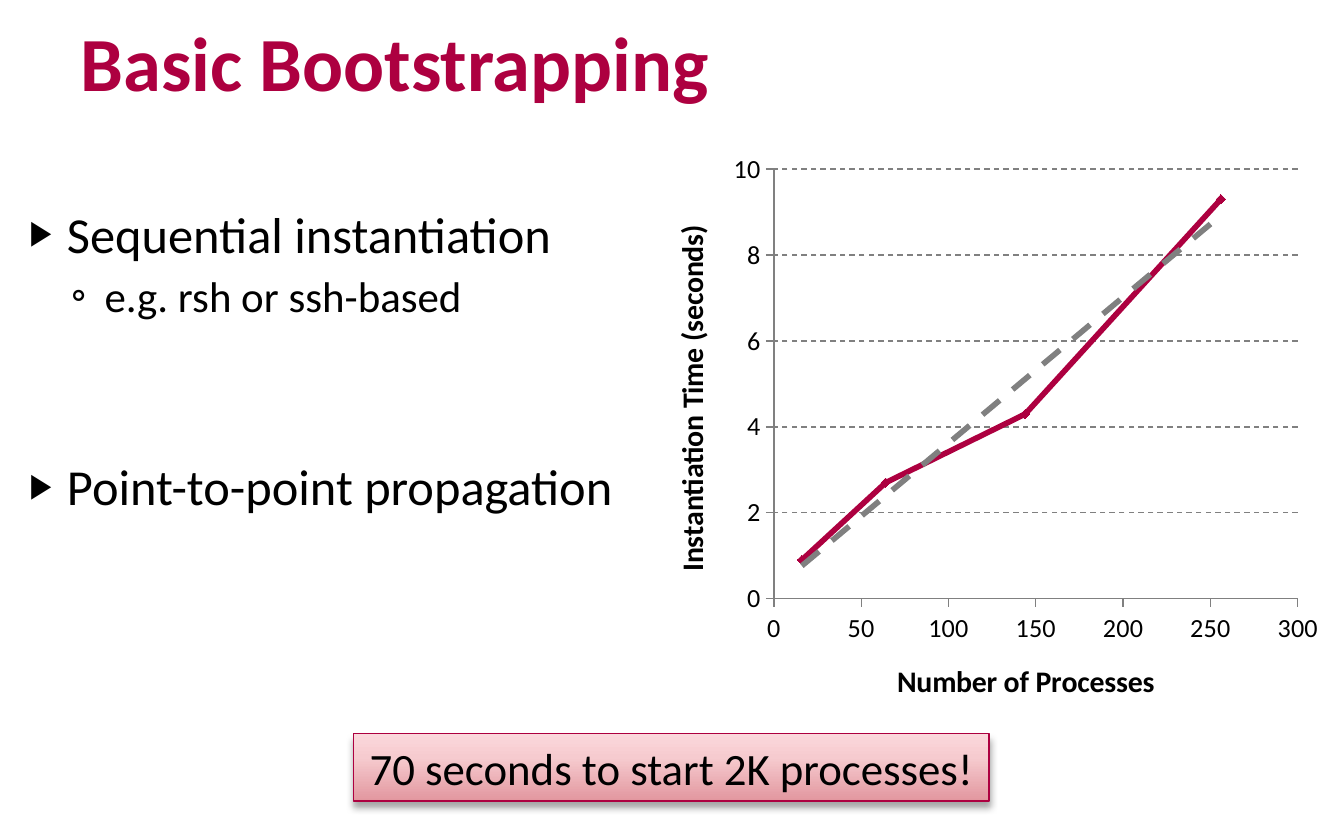
from pptx import Presentation
from pptx.chart.data import XyChartData
from pptx.dml.color import RGBColor
from pptx.enum.chart import XL_CHART_TYPE, XL_MARKER_STYLE, XL_TICK_MARK
from pptx.enum.dml import MSO_LINE
from pptx.enum.shapes import MSO_SHAPE
from pptx.enum.text import MSO_ANCHOR, MSO_AUTO_SIZE, PP_ALIGN
from pptx.oxml import parse_xml
from pptx.oxml.ns import nsdecls
from pptx.util import Inches, Pt

WIDTH, HEIGHT = Inches(10), Inches(6.25)
FONT, BLACK, CRIMSON, GRAY = "Calibri", "000000", "AD0040", "808080"

# Boxes as shares of the slide: left, top, width, height
TITLE_BOX = (0.05, 0.0064, 0.9, 0.1328)
BULLET_BOX = (0, 0.2336, 0.475, 0.6592)
CHART_BOX = (0.492, 0.1664, 0.496, 0.6864)
CALLOUT_BOX = (0.263, 0.8736, 0.473, 0.08)

# Bullet levels: sign, sign size in percent, left margin and hanging indent in inches, text size
LEVELS = [("▶", 68, 0.4, 0.28, 27), ("◦", 100, 0.68, 0.25, 23)]
# Level, space before in points, text
BULLETS = [
    (0, 4, "Sequential instantiation"),
    (1, 3.2, "e.g. rsh or ssh-based"),
    (0, 72, "Point-to-point propagation"),
]
POINTS = [(16, 0.9), (64, 2.7), (144, 4.3), (256, 9.3)]
GRADIENT = [(0, "E2979F"), (65, "F6CBCF"), (100, "FBD8DC")]


def color(value):
    return RGBColor.from_string(value)


def place(box):
    """Turn shares of the slide into lengths."""
    left, top, width, height = box
    return int(left * WIDTH), int(top * HEIGHT), int(width * WIDTH), int(height * HEIGHT)


def style_font(font, size, value=BLACK, bold=False):
    font.name, font.size, font.bold = FONT, Pt(size), bold
    font.color.rgb = color(value)


def style_line(line, value, width, dash=None):
    line.color.rgb = color(value)
    line.width = Pt(width)
    if dash is not None:
        line.dash_style = dash


def add_run(para, text, size, value=BLACK, bold=False):
    span = para.add_run()
    span.text = text
    style_font(span.font, size, value, bold)


def add_title(page, box):
    title = page.shapes.title
    title.left, title.top, title.width, title.height = place(box)
    frame = title.text_frame
    frame.vertical_anchor = MSO_ANCHOR.MIDDLE
    para = frame.paragraphs[0]
    para.alignment = PP_ALIGN.LEFT
    add_run(para, "Basic Bootstrapping", 41, CRIMSON, True)


def add_bullets(page, box):
    frame = page.shapes.add_textbox(*place(box)).text_frame
    frame.word_wrap = True
    for index, (level, space, text) in enumerate(BULLETS):
        para = frame.paragraphs[0] if index == 0 else frame.add_paragraph()
        para.level = level
        para.space_before = Pt(space)
        sign, sign_size, margin, hanging, size = LEVELS[level]
        properties = para._p.get_or_add_pPr()
        properties.set("marL", str(Inches(margin)))
        properties.set("indent", str(-Inches(hanging)))
        for xml in (f'<a:buSzPct {nsdecls("a")} val="{sign_size * 1000}"/>',
                    f'<a:buFont {nsdecls("a")} typeface="{FONT}"/>',
                    f'<a:buChar {nsdecls("a")} char="{sign}"/>'):
            properties.append(parse_xml(xml))
        add_run(para, text, size)


def style_axis(axis, title, maximum, step):
    axis.minimum_scale, axis.maximum_scale, axis.major_unit = 0, maximum, step
    axis.major_tick_mark, axis.minor_tick_mark = XL_TICK_MARK.OUTSIDE, XL_TICK_MARK.NONE
    style_font(axis.tick_labels.font, 14)
    axis.tick_labels.number_format = "General"
    axis.tick_labels.number_format_is_linked = False
    style_line(axis.format.line, GRAY, 0.75)
    add_run(axis.axis_title.text_frame.paragraphs[0], title, 16, bold=True)


def add_trend(series):
    series._element.find("{*}xVal").addprevious(parse_xml(
        f'<c:trendline {nsdecls("c", "a")}><c:spPr><a:ln w="{Pt(3)}"><a:solidFill>'
        f'<a:srgbClr val="{GRAY}"/></a:solidFill><a:prstDash val="dash"/></a:ln></c:spPr>'
        '<c:trendlineType val="linear"/><c:dispRSqr val="0"/><c:dispEq val="0"/></c:trendline>'))


def set_plot_area(chart, left, top, width, height):
    """Fix the inner plot area, in shares of the chart."""
    area = chart._chartSpace.chart.plotArea
    for old in area.findall("{*}layout"):
        area.remove(old)
    area.insert(0, parse_xml(
        f'<c:layout {nsdecls("c")}><c:manualLayout><c:layoutTarget val="inner"/>'
        '<c:xMode val="edge"/><c:yMode val="edge"/>'
        f'<c:x val="{left}"/><c:y val="{top}"/><c:w val="{width}"/><c:h val="{height}"/>'
        '</c:manualLayout></c:layout>'))


def add_timing_chart(page, box):
    data = XyChartData()
    points = data.add_series("Series 1")
    for processes, seconds in POINTS:
        points.add_data_point(processes, seconds)
    chart = page.shapes.add_chart(XL_CHART_TYPE.XY_SCATTER_LINES, *place(box), data).chart
    chart.has_title = chart.has_legend = False
    style_font(chart.font, 10)
    chart.plots[0].vary_by_categories = False
    style_axis(chart.category_axis, "Number of Processes", 300, 50)
    style_axis(chart.value_axis, "Instantiation Time (seconds)", 10, 2)
    chart.category_axis.has_major_gridlines = False
    style_line(chart.value_axis.major_gridlines.format.line, GRAY, 0.75, MSO_LINE.DASH)
    series = chart.plots[0].series[0]
    series.smooth = False
    style_line(series.format.line, CRIMSON, 3)
    marker = series.marker
    marker.style, marker.size = XL_MARKER_STYLE.DIAMOND, 5
    marker.format.fill.solid()
    marker.format.fill.fore_color.rgb = color(CRIMSON)
    style_line(marker.format.line, CRIMSON, 0.75)
    add_trend(series)
    set_plot_area(chart, 0.169, 0.051, 0.786, 0.745)


def add_callout(page, box):
    callout = page.shapes.add_shape(MSO_SHAPE.RECTANGLE, *place(box))
    style_line(callout.line, CRIMSON, 0.75)
    stops = "".join(f'<a:gs pos="{share * 1000}"><a:srgbClr val="{value}"/></a:gs>'
                    for share, value in GRADIENT)
    properties = callout._element.spPr
    properties.find("{*}ln").addprevious(parse_xml(
        f'<a:gradFill {nsdecls("a")} rotWithShape="1"><a:gsLst>{stops}</a:gsLst>'
        '<a:lin ang="16200000" scaled="0"/></a:gradFill>'))
    properties.append(parse_xml(
        f'<a:effectLst {nsdecls("a")}><a:outerShdw blurRad="{Pt(4)}" dist="{Pt(3)}" '
        f'dir="5400000" rotWithShape="0"><a:srgbClr val="{BLACK}"><a:alpha val="35000"/>'
        '</a:srgbClr></a:outerShdw></a:effectLst>'))
    frame = callout.text_frame
    frame.word_wrap = False
    frame.auto_size = MSO_AUTO_SIZE.SHAPE_TO_FIT_TEXT
    para = frame.paragraphs[0]
    para.alignment = PP_ALIGN.CENTER
    add_run(para, "70 seconds to start 2K processes!", 24)


def main():
    deck = Presentation()
    deck.slide_width, deck.slide_height = WIDTH, HEIGHT
    page = deck.slides.add_slide(deck.slide_layouts.get_by_name("Title Only"))
    add_title(page, TITLE_BOX)
    add_bullets(page, BULLET_BOX)
    add_timing_chart(page, CHART_BOX)
    add_callout(page, CALLOUT_BOX)
    deck.save("out.pptx")


if __name__ == "__main__":
    main()
